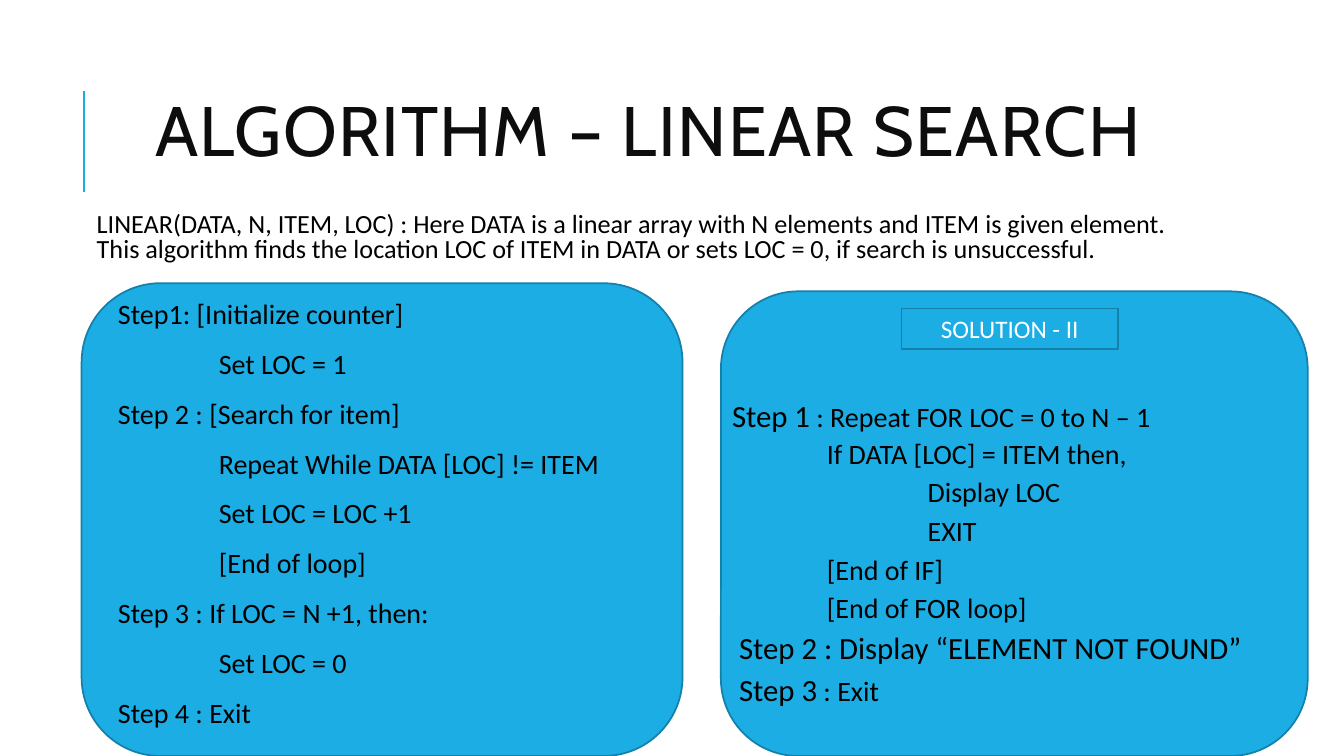
"""Build the linear search algorithm slide."""
from lxml.etree import SubElement
from pptx import Presentation
from pptx.dml.color import RGBColor
from pptx.enum.shapes import MSO_CONNECTOR as CONNECTOR, MSO_SHAPE as SHAPE
from pptx.enum.text import MSO_ANCHOR as ANCHOR, PP_ALIGN as ALIGN
from pptx.oxml.ns import qn
from pptx.util import Emu, Pt

PX = 9144
BLUE, DARK_BLUE, BLACK = "1CADE4", "1580A9", "000000"


def color(value):
    return RGBColor.from_string(value)


def write(paragraph, runs, font="Calibri", ink=BLACK, indent=0):
    paragraph._p.get_or_add_pPr().set("marL", str(indent * PX))
    for text, size in runs:
        run = paragraph.add_run()
        run.text = text
        run.font.size = Pt(size)
        run.font.name = font
        run.font.color.rgb = color(ink)


presentation = Presentation()
presentation.slide_width, presentation.slide_height = Emu(1333 * PX), Emu(750 * PX)
slide = presentation.slides.add_slide(presentation.slide_layouts[6])
shapes = slide.shapes

accent = shapes.add_connector(CONNECTOR.STRAIGHT, 83 * PX, 190 * PX, 83 * PX, 90 * PX)
accent.line.color.rgb = color(BLUE)
accent.line.width = Pt(1.5)
SubElement(accent._element.spPr, qn("a:effectLst"))

panels = []
for kind, box in [
    (SHAPE.ROUNDED_RECTANGLE, (81, 281, 596, 469)),
    (SHAPE.ROUNDED_RECTANGLE, (715, 289, 582, 461)),
    (SHAPE.RECTANGLE, (894, 306, 215, 40)),
]:
    panel = shapes.add_shape(kind, *(length * PX for length in box))
    panel.shadow.inherit = False
    panel.fill.solid()
    panel.fill.fore_color.rgb = color(BLUE)
    panel.line.color.rgb = color(DARK_BLUE)
    panel.line.width = Pt(1.25)
    panels.append(panel)

label = panels[-1].text_frame.paragraphs[0]
label.alignment = ALIGN.CENTER
write(label, [("SOLUTION - II", 18)], ink="FFFFFF")

title_frame = shapes.add_textbox(112 * PX, 64 * PX, 1063 * PX, 143 * PX).text_frame
title_frame.word_wrap = True
title_frame.vertical_anchor = ANCHOR.MIDDLE
title = title_frame.paragraphs[0]
title.alignment = ALIGN.CENTER
title.line_spacing = 0.8
write(title, [("ALGORITHM – LINEAR SEARCH", 50)], "Cabin", "0D0D0D")
title.runs[0].font._element.set("spc", "100")

INTRO = (
    "LINEAR(DATA, N, ITEM, LOC) : Here DATA is a linear array with N elements and ITEM is given element. "
    "This algorithm finds the location LOC of ITEM in DATA or sets LOC = 0, if search is unsuccessful."
)
WIDE, TIGHT = (12, 2), (2, 4)
while_steps = [
    (0, "Step1: [Initialize counter]"),
    (100, "Set LOC = 1"),
    (0, "Step 2 : [Search for item]"),
    (100, "Repeat While DATA [LOC] != ITEM"),
    (100, "Set LOC = LOC +1"),
    (100, "[End of loop]"),
    (0, "Step 3 : If LOC = N +1, then:"),
    (100, "Set LOC = 0"),
    (0, "Step 4 : Exit"),
]
for_steps = [
    (7, WIDE, [("Step 1", 22), (" : Repeat FOR LOC = 0 to N – 1", 20)]),
    (101, TIGHT, [("If DATA [LOC] = ITEM then,", 20)]),
    (201, TIGHT, [("Display LOC", 20)]),
    (201, TIGHT, [("EXIT", 20)]),
    (101, TIGHT, [("[End of IF]", 20)]),
    (101, TIGHT, [("[End of FOR loop]", 20)]),
    (14, TIGHT, [("Step 2 : Display “ELEMENT NOT FOUND”", 22)]),
    (14, TIGHT, [("Step 3", 22), (" : Exit", 20)]),
]
for box, line_spacing, lines in [
    ((81, 207, 1094, 75), 0.8, [(10, WIDE, [(INTRO, 18.7)])]),
    ((112, 293, 1085, 449), 0.9, [(indent, WIDE, [(text, 20)]) for indent, text in while_steps]),
    ((714, 393, 569, 317), 0.9, for_steps),
]:
    frame = shapes.add_textbox(*(length * PX for length in box)).text_frame
    frame.word_wrap = True
    frame.margin_left = frame.margin_right = frame.margin_top = frame.margin_bottom = 5 * PX
    for number, (indent, (before, after), runs) in enumerate(lines):
        paragraph = frame.add_paragraph() if number else frame.paragraphs[0]
        paragraph.line_spacing = line_spacing
        paragraph.space_before, paragraph.space_after = Pt(before), Pt(after)
        write(paragraph, runs, indent=indent)

presentation.save("out.pptx")
